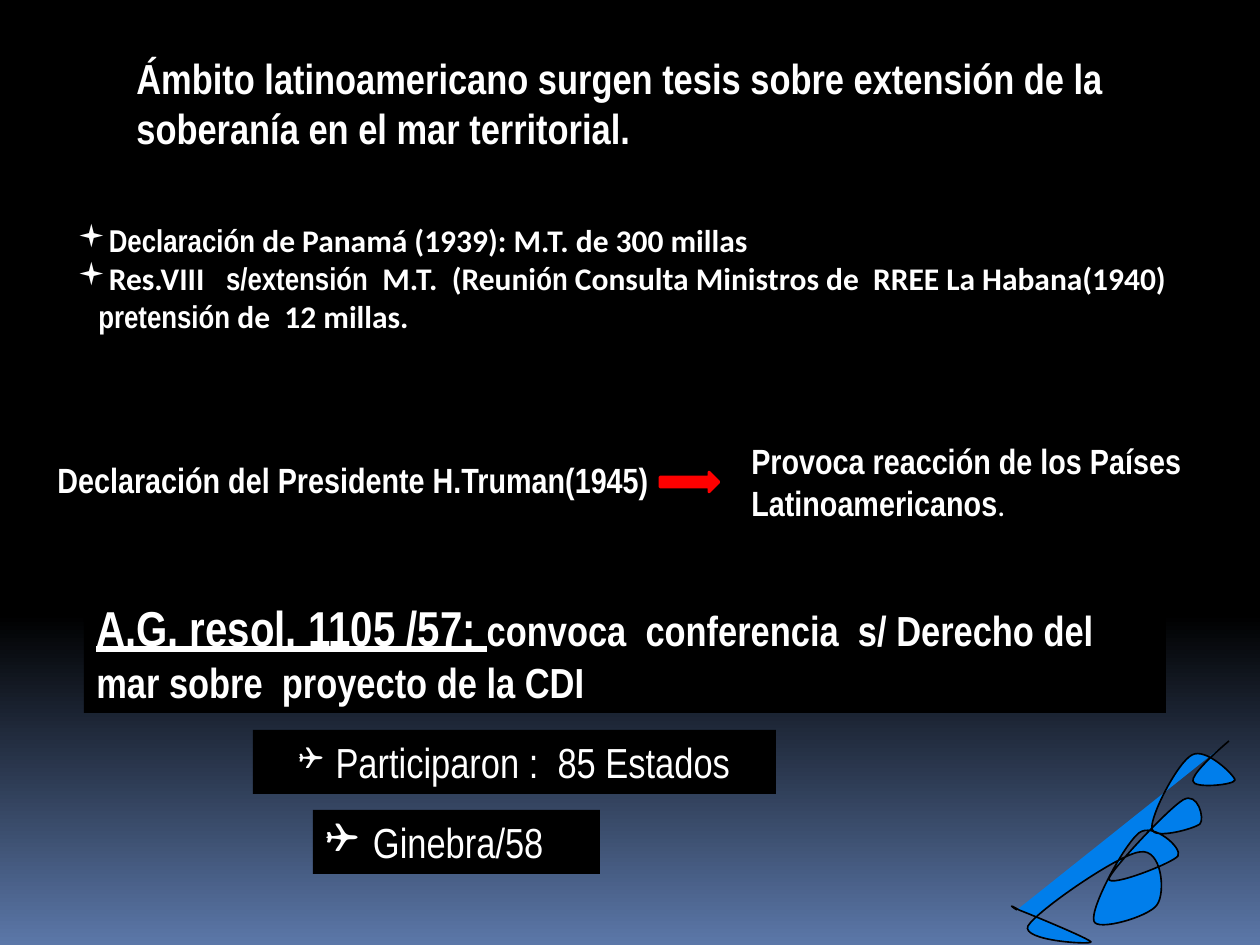
from lxml import etree
from pptx import Presentation
from pptx.dml.color import RGBColor
from pptx.enum.shapes import MSO_SHAPE as Shape
from pptx.enum.text import MSO_ANCHOR as Anchor, PP_ALIGN as Align
from pptx.oxml.ns import qn
from pptx.util import Emu, Pt

PX = 7257.143  # EMU per pixel, 126 pixels to the inch
COLORS = {"black": "000000", "white": "FFFFFF", "sky": "5B77A8",
          "ribbon": "007EEB", "arrow": "FF0000"}
NARROW, CALIBRI = "Arial Narrow", "Calibri"


def px(*values):
    return [Emu(round(value * PX)) for value in values]


def add_text(shape, runs, size, bold=True, bullet=None, margin=0, hanging=0, first=True):
    """Write one paragraph; each run is (text, font name, own settings)."""
    frame = shape.text_frame
    paragraph = frame.paragraphs[0] if first else frame.add_paragraph()
    paragraph.alignment = Align.LEFT
    font = paragraph.font
    font.size, font.bold, font.name = Pt(size), bold, runs[0][1]
    font.color.rgb = RGBColor.from_string(COLORS["white"])
    for text, name, own in runs:
        run = paragraph.add_run()
        run.text = text
        if name != font.name:
            run.font.name = name
        for key, value in own.items():
            setattr(run.font, key, value)
    properties = paragraph._p.get_or_add_pPr()
    if margin:
        properties.set("marL", str(px(margin)[0]))
        properties.set("indent", str(-px(hanging)[0]))
    if bullet:
        properties.insert(0, etree.Element(qn("a:buFont"), typeface="Wingdings"))
        properties.insert(1, etree.Element(qn("a:buChar"), char=bullet))


presentation = Presentation()
presentation.slide_width, presentation.slide_height = px(1260, 945)
slide = presentation.slides.add_slide(presentation.slide_layouts[6])
shapes = slide.shapes

# Background: black fading to blue at the foot
background = slide.background.fill
background.gradient()
background.gradient_angle = 270
for stop, position, color in zip(background.gradient_stops, (0.65, 1), ("black", "sky")):
    stop.position = position
    stop.color.rgb = RGBColor.from_string(COLORS[color])

# Black panels: resolution, place and participants
panels = [
    ((84, 591, 1082, 122), True, dict(size=24, runs=[
        ("A.G. resol. 1105 /57: ", NARROW, {"size": Pt(28), "underline": True}),
        ("convoca  conferencia  s/ Derecho del mar sobre  proyecto de la CDI", NARROW, {})])),
    ((313, 810, 287, 64), True, dict(
        size=24, bold=False, bullet="❑", margin=38, hanging=38,
        runs=[(" Ginebra/58", NARROW, {})])),
    ((253, 730, 523, 64), True, dict(
        size=18, bold=False, bullet="❑", margin=63, hanging=30,
        runs=[(" ", CALIBRI, {}),
              ("Participaron :  85 Estados", NARROW, {"size": Pt(24)})])),
]
for box, wrap, text in panels:
    panel = shapes.add_shape(Shape.RECTANGLE, *px(*box))
    panel.shadow.inherit = False
    panel.fill.solid()
    panel.fill.fore_color.rgb = RGBColor.from_string(COLORS["black"])
    panel.line.fill.background()
    panel.text_frame.word_wrap = wrap
    panel.text_frame.vertical_anchor = Anchor.TOP
    add_text(panel, **text)

# Ribbon: a start, then two control points and an end point for each curve
start = (1229, 741)
curve_points = [
    (1210, 757), (1192, 775), (1193, 781), (1193, 789), (1235, 785), (1235, 780),
    (1235, 776), (1206, 747), (1192, 755), (1178, 762), (1150, 816), (1152, 829),
    (1153, 840), (1194, 829), (1200, 824), (1205, 819), (1198, 791), (1183, 800),
    (1168, 809), (1110, 871), (1109, 879), (1109, 888), (1173, 863), (1178, 856),
    (1183, 848), (1153, 822), (1139, 833), (1124, 845), (1090, 908), (1094, 921),
    (1096, 932), (1149, 917), (1157, 905), (1166, 893), (1162, 848), (1140, 852),
    (1119, 854), (1037, 911), (1028, 926), (1021, 941), (1092, 945), (1091, 942),
    (1090, 939), (1032, 915), (1019, 910), (1007, 903), (1012, 907), (1017, 910),
]
builder = shapes.build_freeform(*start, scale=PX)
builder.add_line_segments(curve_points, close=False)
ribbon = builder.convert_to_shape()
segments = list(ribbon._element.iter(qn("a:lnTo")))
for first in range(0, len(segments), 3):
    curve = etree.Element(qn("a:cubicBezTo"))
    segments[first].addprevious(curve)
    for segment in segments[first:first + 3]:
        curve.append(segment[0])
        segment.getparent().remove(segment)
ribbon.shadow.inherit = False
ribbon.fill.solid()
ribbon.fill.fore_color.rgb = RGBColor.from_string(COLORS["ribbon"])
ribbon.line.color.rgb = RGBColor.from_string(COLORS["black"])
ribbon.line.width = Pt(0.94)

# Text boxes: heading, declarations, cause and reaction
text_boxes = [
    ((124, 46, 1022, 151), True, [dict(size=24, runs=[
        ("Ámbito latinoamericano surgen tesis sobre extensión de la soberanía "
         "en el mar territorial.", NARROW, {})])]),
    ((65, 215, 1195, 202), True, [
        dict(size=18, bullet="▪", margin=30, hanging=30, runs=[
            ("Declaración ", NARROW, {}),
            ("de Panamá (1939): M.T. de 300 millas", CALIBRI, {})]),
        dict(size=18, bullet="▪", margin=30, hanging=30, runs=[
            ("Res.VIII   ", CALIBRI, {}), ("s/extensión ", NARROW, {}),
            (" M.T.  (Reuni", CALIBRI, {}), ("ón", NARROW, {}),
            (" Consulta Ministros de  RREE La Habana(1940)", CALIBRI, {})]),
        dict(size=18, margin=21, runs=[
            ("pretensión", NARROW, {}), (" de  12 millas.", CALIBRI, {})])]),
    ((45, 452, 621, 55), False, [dict(size=20, runs=[
        ("Declaración del Presidente H.Truman(1945)", NARROW, {})])]),
    ((739, 433, 466, 97), True, [dict(size=20, runs=[
        ("Provoca reacción de los Países Latinoamericanos", NARROW, {}),
        (".", CALIBRI, {"size": Pt(18), "bold": False})])]),
]
for box, wrap, paragraphs in text_boxes:
    text_box = shapes.add_textbox(*px(*box))
    text_box.text_frame.word_wrap = wrap
    for index, text in enumerate(paragraphs):
        add_text(text_box, first=index == 0, **text)

# Arrow from cause to reaction
arrow = shapes.add_shape(Shape.RIGHT_ARROW, *px(660, 472, 59, 20))
arrow.shadow.inherit = False
arrow.fill.solid()
arrow.fill.fore_color.rgb = RGBColor.from_string(COLORS["arrow"])
arrow.line.color.rgb = RGBColor.from_string(COLORS["arrow"])
arrow.line.width = Pt(1.5)

presentation.save("out.pptx")
